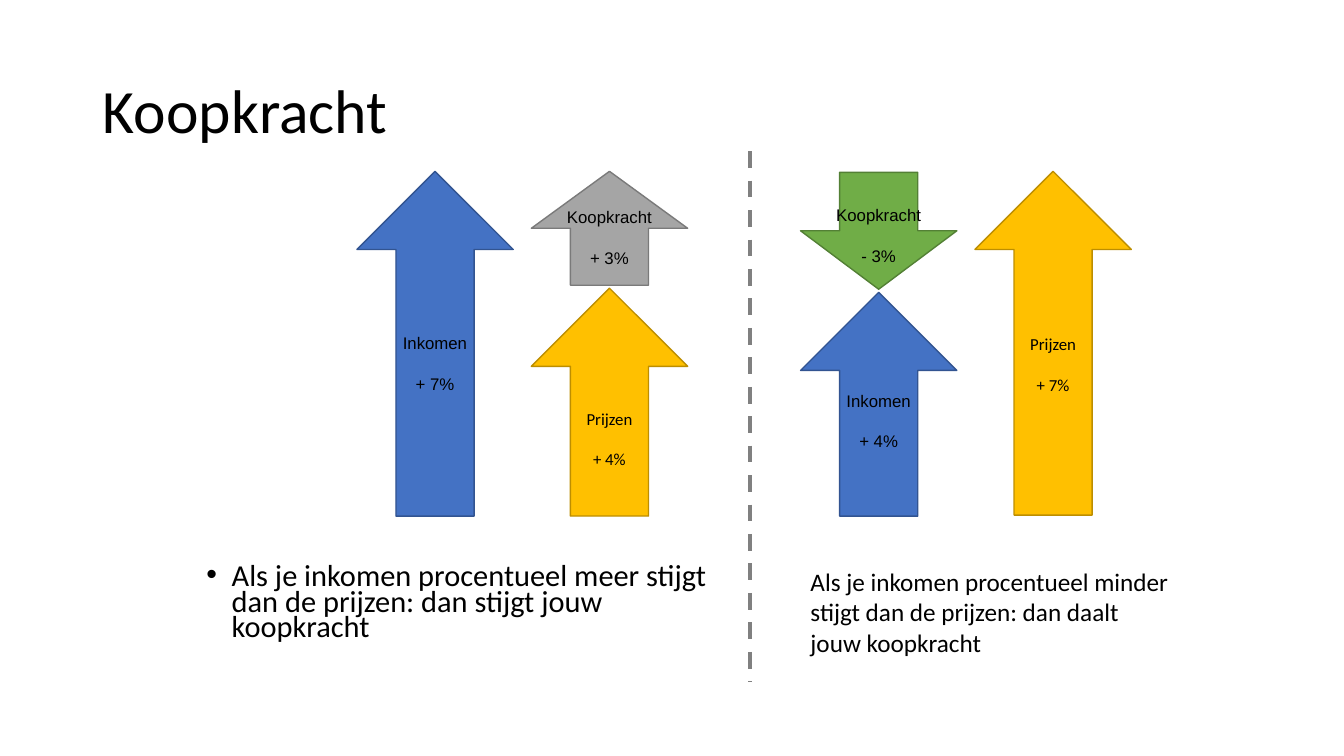
from lxml import etree
from pptx import Presentation
from pptx.dml.color import RGBColor
from pptx.enum.dml import MSO_LINE
from pptx.enum.shapes import MSO_CONNECTOR, MSO_SHAPE
from pptx.enum.text import MSO_ANCHOR, MSO_AUTO_SIZE, PP_ALIGN
from pptx.oxml.ns import qn
from pptx.util import Pt

PX = 9144
TITLE_ONLY = 5
UP, DOWN = MSO_SHAPE.UP_ARROW, MSO_SHAPE.DOWN_ARROW
STRAIGHT, DASH = MSO_CONNECTOR.STRAIGHT, MSO_LINE.DASH
MIDDLE, TOP = MSO_ANCHOR.MIDDLE, MSO_ANCHOR.TOP
LEFT, CENTER = PP_ALIGN.LEFT, PP_ALIGN.CENTER
NO_FIT = MSO_AUTO_SIZE.NONE

BLACK = RGBColor(0x00, 0x00, 0x00)
GREY_LINE = RGBColor(0x80, 0x80, 0x80)
BLUE = RGBColor(0x44, 0x72, 0xC4), RGBColor(0x32, 0x54, 0x91)
YELLOW = RGBColor(0xFF, 0xC0, 0x00), RGBColor(0xBD, 0x8E, 0x00)
GREY = RGBColor(0xA5, 0xA5, 0xA5), RGBColor(0x7A, 0x7A, 0x7A)
GREEN = RGBColor(0x70, 0xAD, 0x47), RGBColor(0x53, 0x80, 0x35)

ARROW_WIDTH = 155
COLUMN_STEP = 173
LABEL_WIDTH, LABEL_HEIGHT = 133, 71

# kind, column, top, height, colours, label, label middle, font
RISING = [
    (UP, 0, 0, 342, BLUE, "Inkomen\n+ 7%", 190, "Arial"),
    (UP, 1, 116, 226, YELLOW, "Prijzen\n+ 4%", 265, "Calibri"),
    (UP, 1, 0, 113, GREY, "Koopkracht\n+ 3%", 65, "Arial"),
]
FALLING = [
    (UP, 0, 120, 222, BLUE, "Inkomen\n+ 4%", 247, "Arial"),
    (UP, 1, 0, 341, YELLOW, "Prijzen\n+ 7%", 191, "Calibri"),
    (DOWN, 0, 1, 116, GREEN, "Koopkracht\n- 3%", 63, "Arial"),
]


def scaled(*lengths):
    return [length * PX for length in lengths]


def format_text(frame, text, size, font, align=LEFT, anchor=TOP):
    frame.text = text
    frame.word_wrap = True
    frame.auto_size = NO_FIT
    frame.vertical_anchor = anchor
    for para in frame.paragraphs:
        para.alignment = align
        for span in para.runs:
            span.font.size = Pt(size)
            span.font.name = font
            span.font.color.rgb = BLACK
    return frame.paragraphs


def add_title(page, box, text):
    title = page.shapes.title
    title.left, title.top, title.width, title.height = scaled(*box)
    para = format_text(title.text_frame, text, 44, "Calibri", anchor=MIDDLE)[0]
    para.line_spacing = 0.9


def add_arrow_group(page, left, top, arrows):
    for kind, column, offset, height, colours, label, middle, font in arrows:
        x = left + column * COLUMN_STEP
        arrow = page.shapes.add_shape(
            kind, *scaled(x, top + offset, ARROW_WIDTH, height))
        arrow.shadow.inherit = False
        arrow.fill.solid()
        arrow.fill.fore_color.rgb, arrow.line.color.rgb = colours
        arrow.line.width = Pt(1)

        label_box = page.shapes.add_textbox(*scaled(
            x + (ARROW_WIDTH - LABEL_WIDTH) // 2,
            top + middle - LABEL_HEIGHT // 2, LABEL_WIDTH, LABEL_HEIGHT))
        paras = format_text(label_box.text_frame, label, 12, font, CENTER, MIDDLE)
        paras[1].space_before = Pt(14.5)


def add_divider(page, x, top, bottom):
    divider = page.shapes.add_connector(STRAIGHT, *scaled(x, top, x, bottom))
    divider.line.color.rgb = GREY_LINE
    divider.line.width = Pt(3)
    divider.line.dash_style = DASH
    etree.SubElement(divider._element.spPr, qn("a:effectLst"))


def add_conclusion(page, box, text, size, bulleted=False):
    conclusion = page.shapes.add_textbox(*scaled(*box))
    para = format_text(conclusion.text_frame, text, size, "Calibri")[0]
    if bulleted:
        para.line_spacing = 0.7
        properties = para._p.get_or_add_pPr()
        properties.set("marL", str(25 * PX))
        properties.set("indent", str(-25 * PX))
        etree.SubElement(properties, qn("a:buFont"), typeface="Arial")
        etree.SubElement(properties, qn("a:buChar"), char="•")


def main():
    deck = Presentation()
    deck.slide_width, deck.slide_height = scaled(1333, 750)
    page = deck.slides.add_slide(deck.slide_layouts[TITLE_ONLY])
    add_title(page, (92, 40, 1150, 145), "Koopkracht")
    add_conclusion(
        page, (195, 557, 524, 94),
        "Als je inkomen procentueel meer stijgt dan de prijzen: "
        "dan stijgt jouw koopkracht", 21.7, bulleted=True)
    add_arrow_group(page, 354, 170, RISING)
    add_arrow_group(page, 794, 170, FALLING)
    add_divider(page, 744, 150, 676)
    add_conclusion(
        page, (794, 557, 375, 101),
        "Als je inkomen procentueel minder stijgt dan de prijzen: "
        "dan daalt jouw koopkracht", 18)
    deck.save("out.pptx")


if __name__ == "__main__":
    main()
